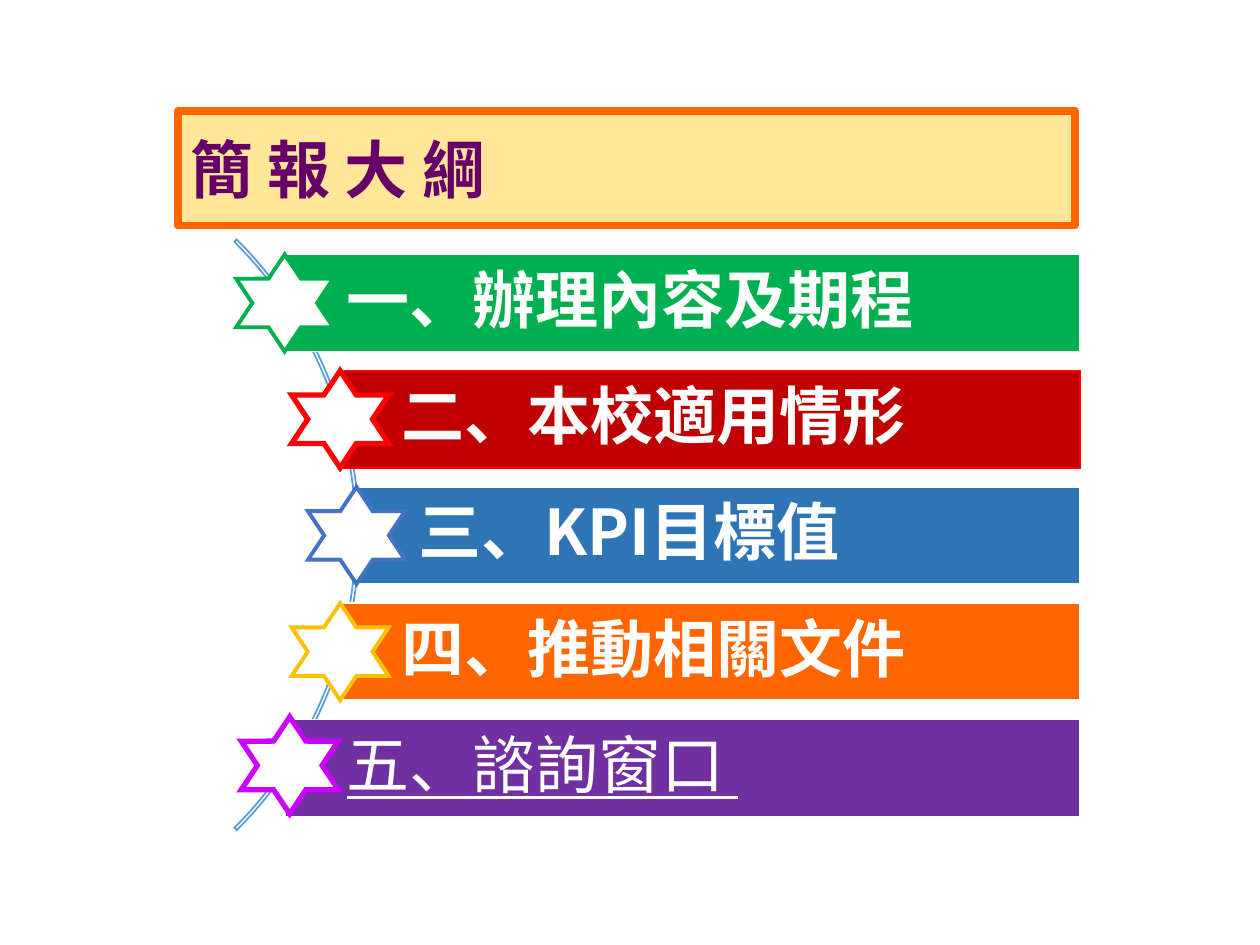
from dataclasses import dataclass

from lxml.etree import SubElement
from pptx import Presentation
from pptx.dml.color import RGBColor
from pptx.enum.shapes import MSO_SHAPE as Kind
from pptx.enum.text import MSO_ANCHOR as Anchor, MSO_AUTO_SIZE as Fit, PP_ALIGN as Align
from pptx.oxml.ns import qn
from pptx.util import Inches, Pt


@dataclass(frozen=True)
class Theme:
    font: str = "Noto Sans CJK SC"
    size: int = 36
    white: str = "FFFFFF"
    arc: str = "5B9BD5"
    cream: str = "FFE699"
    orange: str = "FF6600"
    plum: str = "660066"


THEME = Theme()
RIGHT, TOP, SIDE = 8.57, 2.02, 0.77
PITCH = (5.71 - TOP) / 4

# text, bar left, bar fill, bar line, star line, star line width, star shift, font style
ITEMS = [
    ("一、辦理內容及期程", 2.26, "00B050", THEME.white, "00B050", 2.25, (0, 0), {"bold": True}),
    ("二、本校適用情形", 2.7, "C00000", "FF0000", "FF0000", 3, (0, 0), {"bold": True}),
    ("三、KPI目標值", 2.83, "2E75B6", THEME.white, "4472C4", 2.25, (0, 0), {"bold": True}),
    ("四、推動相關文件", 2.7, "FF6600", THEME.white, "FFC000", 2.25, (0, 0), {"bold": True}),
    ("五、諮詢窗口 ", 2.26, "7030A0", THEME.white, "CC00FF", 3, (0.04, -0.02),
     {"bold": False, "underline": True}),
]


def assign(target, values):
    for name, value in values.items():
        setattr(target, name, value)


def paint(shape, fill, line, width, join="miter"):
    if fill:
        shape.fill.solid()
        shape.fill.fore_color.rgb = RGBColor.from_string(fill)
    else:
        shape.fill.background()
    shape.line.color.rgb = RGBColor.from_string(line)
    shape.line.width = Pt(width)
    edge = SubElement(shape.line._get_or_add_ln(), qn(f"a:{join}"))
    if join == "miter":
        edge.set("lim", "800000")


def add_shape(slide, kind, box, *look):
    shape = slide.shapes.add_shape(kind, *map(Inches, box))
    shape.shadow.inherit = False
    paint(shape, *look)
    return shape


def write(shape, text, color, spacing, style, **insets):
    frame = shape.text_frame
    assign(frame, {"word_wrap": True, "auto_size": Fit.NONE,
                   "vertical_anchor": Anchor.MIDDLE})
    assign(frame, {f"margin_{side}": Inches(gap) for side, gap in insets.items()})
    para = frame.paragraphs[0]
    assign(para, {"alignment": Align.LEFT, "line_spacing": spacing})
    run = para.add_run()
    run.text = text
    assign(run.font, {"name": THEME.font, "size": Pt(THEME.size), **style})
    run.font.color.rgb = RGBColor.from_string(color)
    SubElement(run.font._element, qn("a:ea")).set("typeface", THEME.font)


def add_title(slide):
    title = slide.shapes.title
    names = ("left", "top", "width", "height")
    assign(title, dict(zip(names, map(Inches, (1.41, 0.88, 7.12, 0.91)))))
    paint(title, THEME.cream, THEME.orange, 4.5, "round")
    write(title, "簡 報 大 綱", THEME.plum, 1.0, {"bold": True})


def add_arc(slide):
    arc = add_shape(slide, Kind.BLOCK_ARC, (-3.78, 0.93, 6.63, 6.63), None, THEME.arc, 1)
    for i, value in enumerate((189, 27, 0.004)):
        arc.adjustments[i] = value


def add_item(slide, top, item):
    """Add one bar with its text, and the star centred on the bar's left end."""
    text, left, fill, line, edge, width, (dx, dy), style = item
    bar = add_shape(slide, Kind.RECTANGLE, (left, top, RIGHT - left, SIDE), fill, line, 1)
    write(bar, text, THEME.white, 0.9, style, left=0.49, top=0.1, right=0.1, bottom=0.1)
    spot = (left - SIDE / 2 + dx, top + dy, SIDE, SIDE)
    add_shape(slide, Kind.STAR_6_POINT, spot, THEME.white, edge, width)


def main():
    deck = Presentation()
    assign(deck, {"slide_width": Inches(10), "slide_height": Inches(7.5)})
    slide = deck.slides.add_slide(deck.slide_layouts.get_by_name("Title Only"))
    add_title(slide)
    add_arc(slide)
    for i, item in enumerate(ITEMS):
        add_item(slide, TOP + i * PITCH, item)
    deck.save("out.pptx")


if __name__ == "__main__":
    main()
